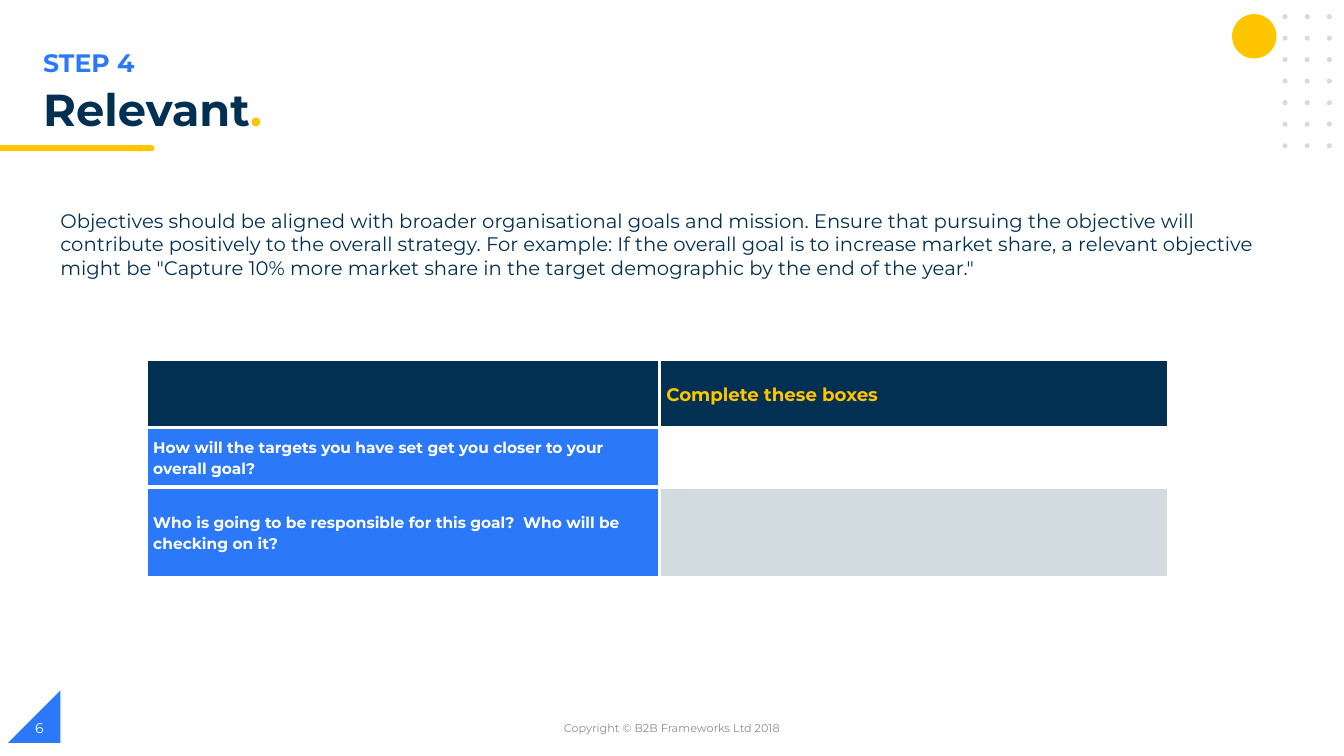
from lxml import etree
from pptx import Presentation, util as u
from pptx.dml.color import RGBColor
from pptx.enum import shapes, text
from pptx.oxml import ns

NAVY = RGBColor(0x02, 0x30, 0x53)
BLUE = RGBColor(0x2B, 0x79, 0xF8)
YELLOW = RGBColor(0xFF, 0xC6, 0x00)
PALE = RGBColor(0xD1, 0xDB, 0xE0)
GREY = RGBColor(0x88, 0x8C, 0x97)
WHITE = RGBColor(0xFF, 0xFF, 0xFF)

FONT = "Montserrat"
WIDTH, HEIGHT = 13.33, 7.5
KIND = shapes.MSO_SHAPE
MIDDLE = text.MSO_ANCHOR.MIDDLE


def add_plain(s, kind, box, color):
    """Filled shape without outline or shadow; box is left, top, width, height."""
    sp = s.shapes.add_shape(kind, *map(u.Inches, box))
    sp.shadow.inherit = False
    sp.fill.solid()
    sp.fill.fore_color.rgb = color
    sp.line.fill.background()
    return sp


def add_run(p, words, size, color, bold=False):
    r = p.add_run()
    r.text = words
    for name, value in dict(name=FONT, size=u.Pt(size), bold=bold).items():
        setattr(r.font, name, value)
    r.font.color.rgb = color


def add_text(s, box, runs, size, bold=False, **paragraph):
    """Text box with one paragraph; runs are (words, colour) pairs."""
    tf = s.shapes.add_textbox(*map(u.Inches, box)).text_frame
    tf.word_wrap = True
    p = tf.paragraphs[0]
    for name, value in paragraph.items():
        setattr(p, name, value)
    for words, color in runs:
        add_run(p, words, size, color, bold)
    return tf


def add_heading(s, x, y, w):
    """Step label, title and the yellow rule running in from the slide edge."""
    add_plain(s, KIND.FLOWCHART_TERMINATOR, (x + 1.01, y + 1.02, 0.19, 0.06), YELLOW)
    add_plain(s, KIND.RECTANGLE, (0, y + 1.02, x + 1.08, 0.06), YELLOW)
    add_text(s, (x, y, w, 0.4), [("STEP 4", BLUE)], 18, True)
    add_text(s, (x, y + 0.4, w, 0.56), [("Relevant", NAVY), (".", YELLOW)], 32, True,
             line_spacing=0.9)


def add_corner_dots(s, x, y):
    """Yellow disc beside a grid of small dots."""
    add_plain(s, KIND.OVAL, (x, y, 0.44, 0.44), YELLOW)
    columns, rows, step_x, step_y = 3, 7, 0.22, 0.2135
    for row in range(rows):
        for col in range(columns):
            add_plain(s, KIND.OVAL,
                      (x + 0.5 + col * step_x, y + row * step_y, 0.05, 0.05), PALE)


def set_borders(cell, color, points):
    tc_pr = cell._tc.get_or_add_tcPr()
    for i, side in enumerate(("a:lnL", "a:lnR", "a:lnT", "a:lnB")):
        ln = etree.Element(ns.qn(side), w=str(u.Pt(points)))
        fill = etree.SubElement(ln, ns.qn("a:solidFill"))
        etree.SubElement(fill, ns.qn("a:srgbClr"), val=str(color))
        tc_pr.insert(i, ln)


def add_question_table(s, x, y, widths, heights):
    # Each cell: words, size, text colour, fill
    cells = [
        [("", 13, YELLOW, NAVY), ("Complete these boxes", 13, YELLOW, NAVY)],
        [("How will the targets you have set get you closer to your overall goal?",
          11, WHITE, BLUE), ("", 11, NAVY, WHITE)],
        [("Who is going to be responsible for this goal?  Who will be checking on it?",
          11, WHITE, BLUE), ("", 11, NAVY, PALE)],
    ]
    frame = s.shapes.add_table(len(heights), len(widths), *map(
        u.Inches, (x, y, sum(widths), sum(heights))))
    table = frame.table
    for column, width in zip(table.columns, widths):
        column.width = u.Inches(width)
    for i, (row, height) in enumerate(zip(table.rows, heights)):
        row.height = u.Inches(height)
        for cell, (words, size, color, fill) in zip(row.cells, cells[i]):
            cell.fill.solid()
            cell.fill.fore_color.rgb = fill
            set_borders(cell, WHITE, 3)
            layout = dict(vertical_anchor=MIDDLE, margin_left=u.Inches(0.07),
                          margin_right=u.Inches(0.07), margin_top=0, margin_bottom=0)
            for name, value in layout.items():
                setattr(cell, name, value)
            if words:
                p = cell.text_frame.paragraphs[0]
                p.line_spacing = 1.15
                add_run(p, words, size, color, True)


def add_footer(s, y):
    """Corner triangle with the page number, and the centred copyright line."""
    corner = add_plain(s, KIND.RIGHT_TRIANGLE, (0.08, y - 0.17, 0.52, 0.52), BLUE)
    corner._element.spPr.find(ns.qn("a:xfrm")).set("flipH", "1")
    w = 4.5
    notice = add_text(s, ((WIDTH - w) / 2, y, w, 0.4),
                      [("Copyright © B2B Frameworks Ltd 2018", GREY)], 8,
                      alignment=text.PP_ALIGN.CENTER)
    number = add_text(s, (0.25, y, 3, 0.4), [("6", WHITE)], 10)
    for tf in (notice, number):
        tf.vertical_anchor = MIDDLE


def main():
    prs = Presentation()
    prs.slide_width, prs.slide_height = u.Inches(WIDTH), u.Inches(HEIGHT)
    s = prs.slides.add_slide(prs.slide_layouts[6])
    add_heading(s, 0.33, 0.42, 12.08)
    add_corner_dots(s, 12.22, 0.14)
    add_text(s, (0.5, 2.02, 12.08, 0.81), [(
        "Objectives should be aligned with broader organisational goals and mission. "
        "Ensure that pursuing the objective will contribute positively to the overall "
        "strategy. For example: If the overall goal is to increase market share, a "
        "relevant objective might be \"Capture 10% more market share in the target "
        "demographic by the end of the year.\"", NAVY)], 14)
    add_question_table(s, 1.45, 3.56, (5.09, 5.05), (0.68, 0.59, 0.9))
    add_footer(s, 7.02)
    prs.save("out.pptx")


if __name__ == "__main__":
    main()
